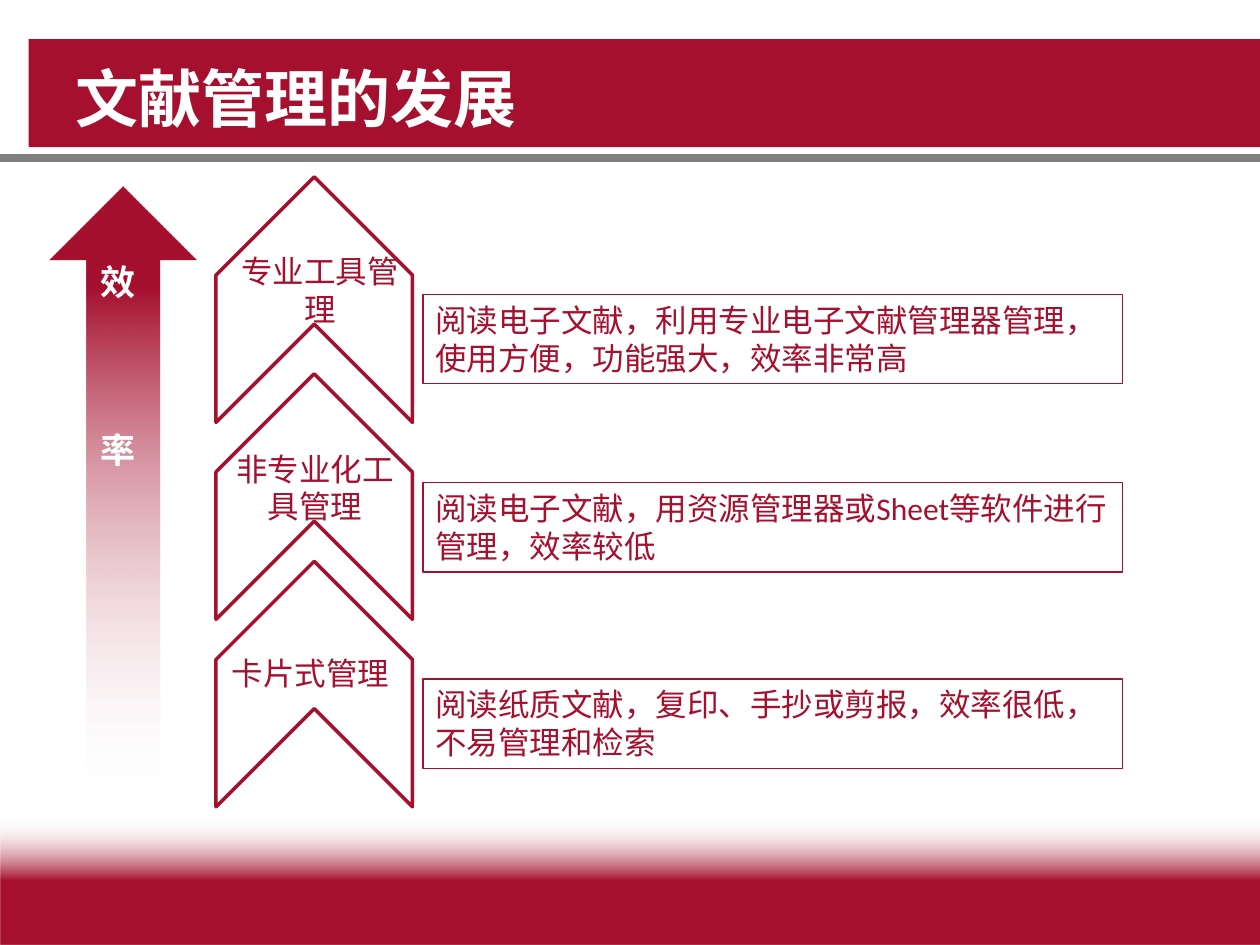
"""Build a slide on the development of literature management."""
from lxml import etree
from pptx import Presentation
from pptx.dml.color import RGBColor
from pptx.enum.shapes import MSO_CONNECTOR, MSO_SHAPE
from pptx.enum.text import MSO_ANCHOR, PP_ALIGN
from pptx.oxml.ns import qn
from pptx.util import Cm, Pt

RECT, CHEVRON, UP_ARROW = MSO_SHAPE.RECTANGLE, MSO_SHAPE.CHEVRON, MSO_SHAPE.UP_ARROW
STRAIGHT = MSO_CONNECTOR.STRAIGHT
MIDDLE, TOP = MSO_ANCHOR.MIDDLE, MSO_ANCHOR.TOP
LEFT, CENTER = PP_ALIGN.LEFT, PP_ALIGN.CENTER

RED = RGBColor(0xA5, 0x10, 0x2E)
WHITE = RGBColor(0xFF, 0xFF, 0xFF)
GRAY = RGBColor(0x80, 0x80, 0x80)
FONT = "Calibri"

TITLE = "文献管理的发展"
AXIS = "效\n率"
STAGES = [
    {"label": "专业工具管理", "label_at": (4.57, 4.95, 3.76, 1.8), "align": CENTER,
     "chevron_top": 4.06, "box_top": 5.94,
     "note": "阅读电子文献，利用专业电子文献管理器管理，使用方便，功能强大，效率非常高"},
    {"label": "非专业化工具管理", "label_at": (4.37, 8.94, 3.96, 1.8), "align": CENTER,
     "chevron_top": 8.03, "box_top": 9.73,
     "note": "阅读电子文献，用资源管理器或Sheet等软件进行管理，效率较低"},
    {"label": "卡片式管理", "label_at": (4.42, 13.06, 3.71, 1.02), "align": LEFT,
     "chevron_top": 11.81, "box_top": 13.69,
     "note": "阅读纸质文献，复印、手抄或剪报，效率很低，不易管理和检索"},
]


def add_shape(slide, kind, at, fill=None, line=None, width=1):
    sp = slide.shapes.add_shape(kind, *map(Cm, at))
    sp.shadow.inherit = False
    if fill is None:
        sp.fill.background()
    else:
        sp.fill.solid()
        sp.fill.fore_color.rgb = fill
    if line is None:
        sp.line.fill.background()
    else:
        sp.line.color.rgb = line
        sp.line.width = Pt(width)
    return sp


def fade(sp, start):
    sp.fill.gradient()
    sp.fill.gradient_angle = 270
    stops = sp.fill.gradient_stops
    for stop, position, color in zip(stops, (start, 1), (RED, WHITE)):
        stop.position = position
        stop.color.rgb = color
    last = list(sp._element.spPr.iter(qn("a:srgbClr")))[-1]
    etree.SubElement(last, qn("a:alpha")).set("val", "0")


def set_text(sp, text, size, color, bold=False, align=LEFT, anchor=TOP, wrap=True, gap=0):
    tf = sp.text_frame
    tf.text = text
    tf.word_wrap = wrap
    tf.vertical_anchor = anchor
    for i, p in enumerate(tf.paragraphs):
        p.alignment = align
        if i:
            p.space_before = Pt(gap)
        for r in p.runs:
            r.font.name = FONT
            r.font.size = Pt(size)
            r.font.bold = bold
            r.font.color.rgb = color


def add_text(slide, at, *args, **kwargs):
    set_text(slide.shapes.add_textbox(*map(Cm, at)), *args, **kwargs)


def main():
    prs = Presentation()
    prs.slide_width, prs.slide_height = Cm(25.4), Cm(19.05)
    slide = prs.slides.add_slide(prs.slide_layouts[6])

    footer = add_shape(slide, RECT, (0, 16.46, 25.4, 2.59))
    footer.rotation = 180
    fade(footer, 0.5)
    add_shape(slide, RECT, (0.58, 0.79, 24.82, 2.18), fill=RED)
    rule = slide.shapes.add_connector(STRAIGHT, 0, Cm(3.18), Cm(25.4), Cm(3.18))
    rule.line.color.rgb = GRAY
    rule.line.width = Pt(4.5)
    etree.SubElement(rule._element.spPr, qn("a:effectLst"))
    add_text(slide, (1.27, 0.76, 22.86, 2.41), TITLE, 36, WHITE, bold=True, anchor=MIDDLE)

    for stage in STAGES:
        chevron = add_shape(slide, CHEVRON, (3.86, stage["chevron_top"], 4.95, 3.96),
                            line=RED, width=2)
        chevron.rotation = 270
    for stage in STAGES:
        add_text(slide, stage["label_at"], stage["label"], 18, RED,
                 align=stage["align"], wrap=stage["align"] == CENTER)
        box = add_shape(slide, RECT, (8.53, stage["box_top"], 14.1, 1.8), line=RED, width=0.75)
        set_text(box, stage["note"], 18, RED)

    arrow = add_shape(slide, UP_ARROW, (0.99, 3.76, 2.97, 12.5))
    fade(arrow, 0.16)
    add_text(slide, (1.78, 5.13, 1.22, 4.52), AXIS, 20, WHITE, bold=True, wrap=False, gap=72)

    prs.save("out.pptx")


if __name__ == "__main__":
    main()
